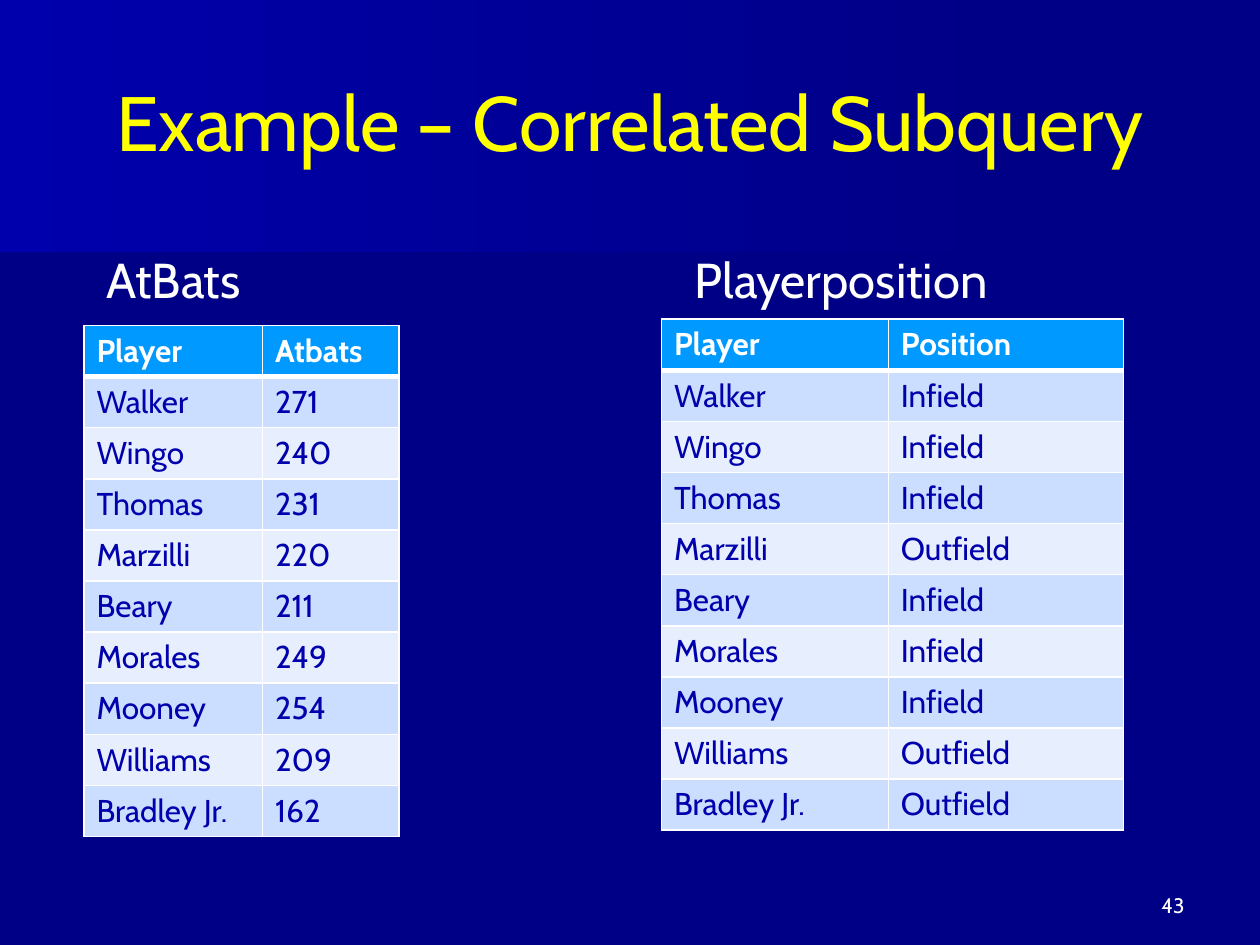
import dataclasses

import pptx
import pptx.dml.color
import pptx.enum.text
import pptx.oxml
import pptx.oxml.ns
import pptx.util

ALIGN = pptx.enum.text.PP_ALIGN
ANCHOR = pptx.enum.text.MSO_ANCHOR
UNIT = pptx.util.Inches(10) // 120  # grid of 120 columns by 90 rows


@dataclasses.dataclass(frozen=True)
class Theme:
    font: str = "Cabin"
    back: str = "000086"
    shade: str = "000083"
    glow: str = "0000AC"
    title: str = "FFFF00"
    light: str = "FFFFFF"
    ink: str = "0000AC"
    head: str = "0099FF"
    bands: tuple = ("CBDEFF", "E7EFFF")
    big: int = 44
    label: int = 28
    cell: int = 18
    small: int = 12
    thin: int = 1
    thick: int = 3


THEME = Theme()
NAMES = ["Walker", "Wingo", "Thomas", "Marzilli", "Beary", "Morales",
         "Mooney", "Williams", "Bradley Jr."]
BATS = ["271", "240", "231", "220", "211", "249", "254", "209", "162"]
PLACES = ["Outfield" if name in ("Marzilli", "Williams", "Bradley Jr.")
          else "Infield" for name in NAMES]


def rgb(code):
    return pptx.dml.color.RGBColor.from_string(code)


def grid(*cells):
    return [round(cell * UNIT) for cell in cells]


def write(frame, text, size, color, align=ALIGN.LEFT, bold=False):
    para = frame.paragraphs[0]
    para.alignment = align
    run = para.add_run()
    run.text = text
    font = run.font
    font.name, font.size, font.bold = THEME.font, pptx.util.Pt(size), bold
    font.color.rgb = rgb(color)


def add_wedge(slide, points, start):
    """Draw a slanted panel, fading to the right, behind the title."""
    first, *rest = points
    build = slide.shapes.build_freeform(*first, scale=pptx.util.Inches(1))
    build.add_line_segments(rest, close=True)
    wedge = build.convert_to_shape()
    wedge.shadow.inherit = False
    wedge.line.fill.background()
    wedge.fill.gradient()
    wedge.fill.gradient_angle = 0
    for stop, color, place in zip(wedge.fill.gradient_stops,
                                  (start, THEME.back), (0, 1)):
        stop.color.rgb = rgb(color)
        stop.position = place
    slide.shapes.title.element.addprevious(wedge.element)


def add_title(slide, box, text):
    title = slide.shapes.title
    title.left, title.top, title.width, title.height = grid(*box)
    title.text_frame.vertical_anchor = ANCHOR.MIDDLE
    write(title.text_frame, text, THEME.big, THEME.title, ALIGN.CENTER)


def add_label(slide, box, text, size, align=ALIGN.LEFT):
    frame = slide.shapes.add_textbox(*grid(*box)).text_frame
    frame.word_wrap = True
    frame.vertical_anchor = ANCHOR.BOTTOM
    write(frame, text, size, THEME.light, align)


def edge(cell, side, width):
    line = pptx.oxml.parse_xml(
        f'<a:ln{side} {pptx.oxml.ns.nsdecls("a")} w="{pptx.util.Pt(width)}">'
        f'<a:solidFill><a:srgbClr val="{THEME.light}"/></a:solidFill>'
        f'</a:ln{side}>')
    cell._tc.get_or_add_tcPr().append(line)


def add_grid(slide, box, widths, rows):
    """Place a banded table with a heavy rule below its header."""
    frame = slide.shapes.add_table(len(rows), len(widths), *grid(*box))
    table = frame.table
    for column, width in zip(table.columns, grid(*widths)):
        column.width = width
    for r, row in enumerate(rows):
        table.rows[r].height = round(box[3] * UNIT / len(rows))
        head = r == 0
        fill = THEME.head if head else THEME.bands[(r - 1) % 2]
        for c, text in enumerate(row):
            cell = table.cell(r, c)
            # Borders come before the fill in the cell's properties
            for side in "LRTB":
                heavy = (side, r) in (("B", 0), ("T", 1))
                edge(cell, side, THEME.thick if heavy else THEME.thin)
            cell.fill.solid()
            cell.fill.fore_color.rgb = rgb(fill)
            write(cell.text_frame, text, THEME.cell,
                  THEME.light if head else THEME.ink, bold=head)


def main():
    deck = pptx.Presentation()
    deck.slide_width, deck.slide_height = grid(120, 90)
    slide = deck.slides.add_slide(deck.slide_layouts[5])
    slide.background.fill.solid()
    slide.background.fill.fore_color.rgb = rgb(THEME.back)

    # Backdrop
    add_wedge(slide, [(7.78, 1.53), (0, 2.17), (0, 1.01), (7.79, 1.01),
                      (7.78, 1.28)], THEME.shade)
    add_wedge(slide, [(7.92, 1.62), (0, 2.08), (0, 0), (7.92, 0)], THEME.glow)

    # Title
    add_title(slide, (6, 4, 108, 15), "Example – Correlated Subquery")

    # Tables and their names
    add_grid(slide, (8, 31, 30, 48.7), (17, 13),
             [("Player", "Atbats"), *zip(NAMES, BATS)])
    add_grid(slide, (63, 30.4, 44, 48.7), (21.6, 22.4),
             [("Player", "Position"), *zip(NAMES, PLACES)])
    add_label(slide, (9, 24, 28, 6), "AtBats", THEME.label)
    add_label(slide, (65, 24, 34, 6), "Playerposition", THEME.label)

    # Page number
    add_label(slide, (86, 82, 28, 6), "43", THEME.small, ALIGN.RIGHT)
    deck.save("out.pptx")


if __name__ == "__main__":
    main()
